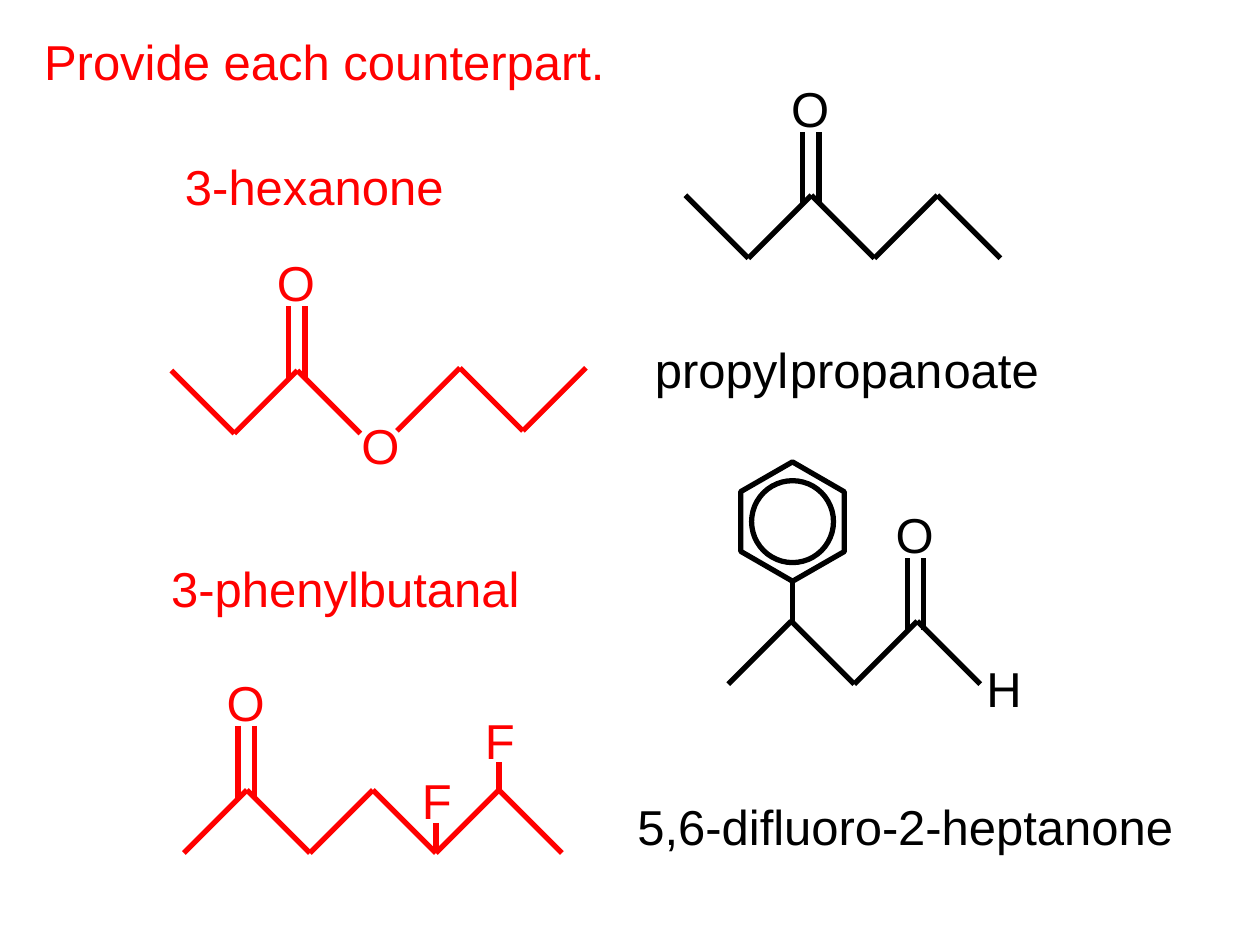
from dataclasses import dataclass
from pptx import Presentation
from pptx.dml.color import RGBColor
from pptx.enum.shapes import MSO_CONNECTOR, MSO_SHAPE
from pptx.enum.text import MSO_ANCHOR, MSO_AUTO_SIZE, PP_ALIGN
from pptx.oxml.ns import qn
from pptx.util import Inches, Pt
from lxml.etree import SubElement


@dataclass(frozen=True)
class Theme:
    """Hold the colours, type and bond sizes."""
    red: RGBColor = RGBColor(255, 0, 0)
    black: RGBColor = RGBColor(0, 0, 0)
    font: str = "Arial"
    size: Pt = Pt(28)
    bond: Pt = Pt(3)
    step: float = 0.5
    height: float = 0.57


THEME = Theme()
WIDTHS = {"O": 0.5, "H": 0.48, "F": 0.44}


def style(frame, text, color):
    """Write one line of text in the theme font."""
    frame.text = text
    frame.word_wrap = False
    frame.auto_size = MSO_AUTO_SIZE.SHAPE_TO_FIT_TEXT
    frame.vertical_anchor = MSO_ANCHOR.MIDDLE
    line = frame.paragraphs[0]
    line.alignment = PP_ALIGN.LEFT
    font = line.runs[0].font
    font.name, font.size, font.color.rgb = THEME.font, THEME.size, color


def add_title(slide, text, color):
    """Place and fill the title placeholder."""
    title = slide.shapes.title
    title.left, title.top = Inches(0.25), Inches(0.2)
    title.width, title.height = Inches(4.77), Inches(THEME.height)
    style(title.text_frame, text, color)


def add_name(slide, text, x, y, width, color):
    """Add a compound name or a part of one."""
    box = slide.shapes.add_textbox(
        Inches(x), Inches(y), Inches(width), Inches(THEME.height))
    style(box.text_frame, text, color)


def add_atom(slide, text, x, y, color):
    """Add an atom letter centred on a point."""
    width = WIDTHS[text]
    add_name(slide, text, x - width / 2, y - THEME.height / 2, width, color)


def add_bond(slide, start, end, color):
    """Draw one bond between two points."""
    ends = [Inches(value) for value in (*start, *end)]
    bond = slide.shapes.add_connector(MSO_CONNECTOR.STRAIGHT, *ends)
    bond.line.color.rgb = color
    bond.line.width = THEME.bond
    SubElement(bond._element.spPr, qn("a:effectLst"))


def add_chain(slide, x, y, turns, color):
    """Draw a zigzag of bonds, u for up and d for down."""
    for turn in turns:
        end = x + THEME.step, y + THEME.step * (1 if turn == "d" else -1)
        add_bond(slide, (x, y), end, color)
        x, y = end


def add_oxo(slide, x, y, color):
    """Draw a double bond to oxygen above a carbon."""
    add_atom(slide, "O", x - 0.01, y - 0.69, color)
    for side in (x - 0.07, x + 0.06):
        add_bond(slide, (side, y - 0.5), (side, y + 0.07), color)


def add_fluoro(slide, x, y, color):
    """Draw a single bond to fluorine above a carbon."""
    add_atom(slide, "F", x + 0.01, y - 0.4, color)
    add_bond(slide, (x, y - 0.22), (x, y), color)


def add_ring(slide, x, y, color):
    """Draw a benzene ring centred on a point."""
    parts = ((MSO_SHAPE.HEXAGON, 0.95, 0.82), (MSO_SHAPE.OVAL, 0.65, 0.65))
    for kind, width, height in parts:
        part = slide.shapes.add_shape(
            kind, Inches(x - width / 2), Inches(y - height / 2),
            Inches(width), Inches(height))
        part.shadow.inherit = False
        part.fill.background()
        part.line.color.rgb = color
        part.line.width = THEME.bond
        part.rotation = 30
        if kind == MSO_SHAPE.HEXAGON:
            part.adjustments[0] = 0.29


def add_hexanone(slide, color):
    """Draw 3-hexanone."""
    add_chain(slide, 5.44, 1.55, "dudud", color)
    add_oxo(slide, 6.44, 1.55, color)


def add_ester(slide, color):
    """Draw the propyl ester."""
    add_chain(slide, 1.36, 2.94, "dud", color)
    add_oxo(slide, 2.36, 2.93, color)
    add_atom(slide, "O", 3.02, 3.53, color)
    add_chain(slide, 3.15, 3.42, "udu", color)


def add_butanal(slide, color):
    """Draw 3-phenylbutanal."""
    add_chain(slide, 5.78, 5.43, "udud", color)
    add_oxo(slide, 7.27, 4.93, color)
    add_atom(slide, "H", 7.97, 5.46, color)
    add_ring(slide, 6.29, 4.14, color)
    add_bond(slide, (6.29, 4.62), (6.29, 4.93), color)


def add_heptanone(slide, color):
    """Draw 5,6-difluoro-2-heptanone."""
    add_chain(slide, 1.46, 6.77, "ududud", color)
    add_oxo(slide, 1.96, 6.26, color)
    add_fluoro(slide, 3.46, 6.75, color)
    add_fluoro(slide, 3.96, 6.27, color)


def main():
    """Build and save the slide."""
    deck = Presentation()
    deck.slide_width, deck.slide_height = Inches(10), Inches(7.5)
    slide = deck.slides.add_slide(deck.slide_layouts[5])
    red, black = THEME.red, THEME.black
    add_title(slide, "Provide each counterpart.", red)
    names = (
        ("3-hexanone", 1.37, 1.19, 2.37, red),
        ("3-phenylbutanal", 1.26, 4.38, 3.09, red),
        ("5,6-difluoro-", 4.96, 6.27, 2.28, black),
        ("propyl", 5.1, 2.64, 1.37, black),
        ("oate", 7.39, 2.64, 1.07, black),
        ("propan", 6.17, 2.64, 1.52, black),
        ("2-heptanone", 7.03, 6.27, 2.5, black),
    )
    for name in names:
        add_name(slide, *name)
    add_hexanone(slide, black)
    add_ester(slide, red)
    add_butanal(slide, black)
    add_heptanone(slide, red)
    deck.save("out.pptx")


if __name__ == "__main__":
    main()
